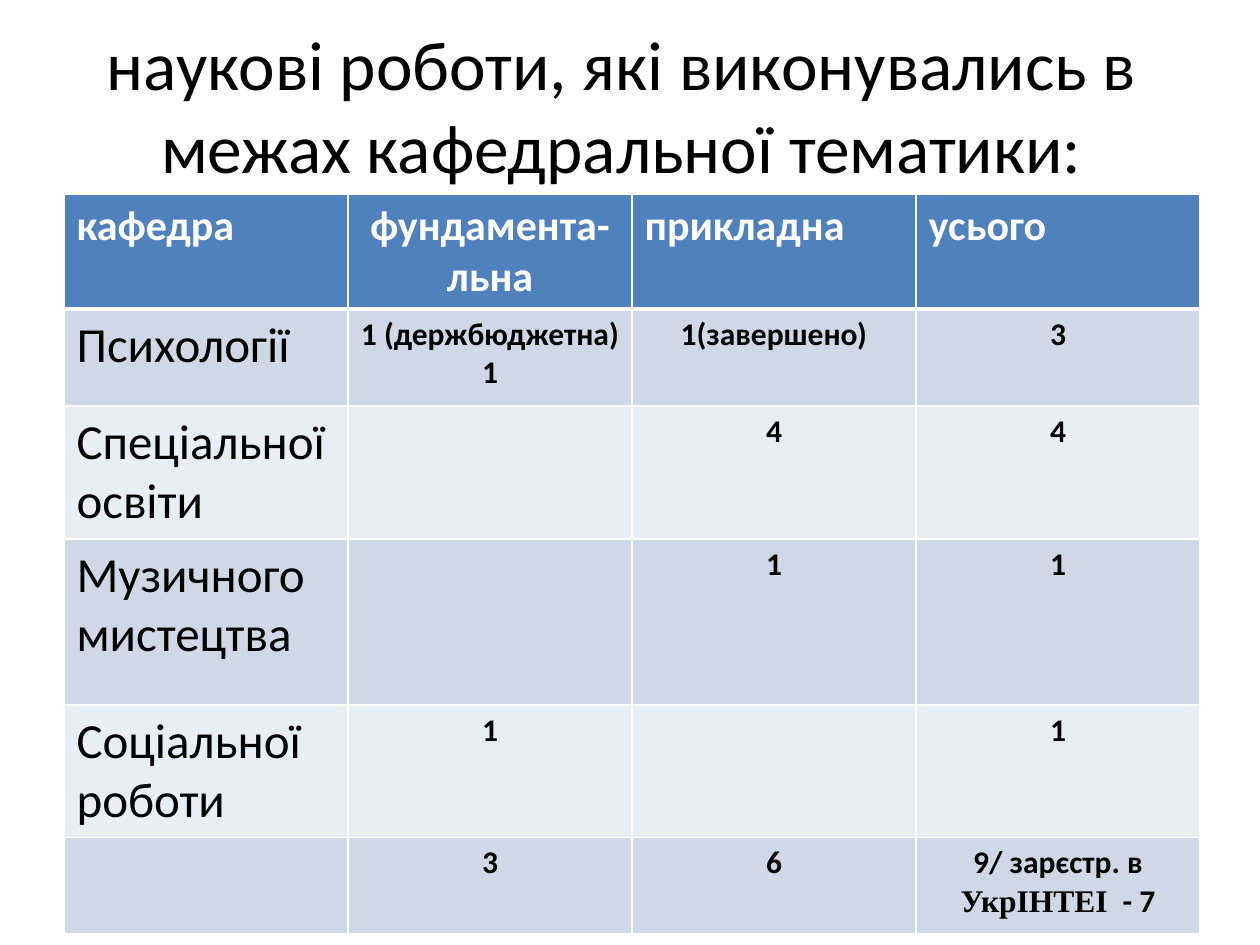
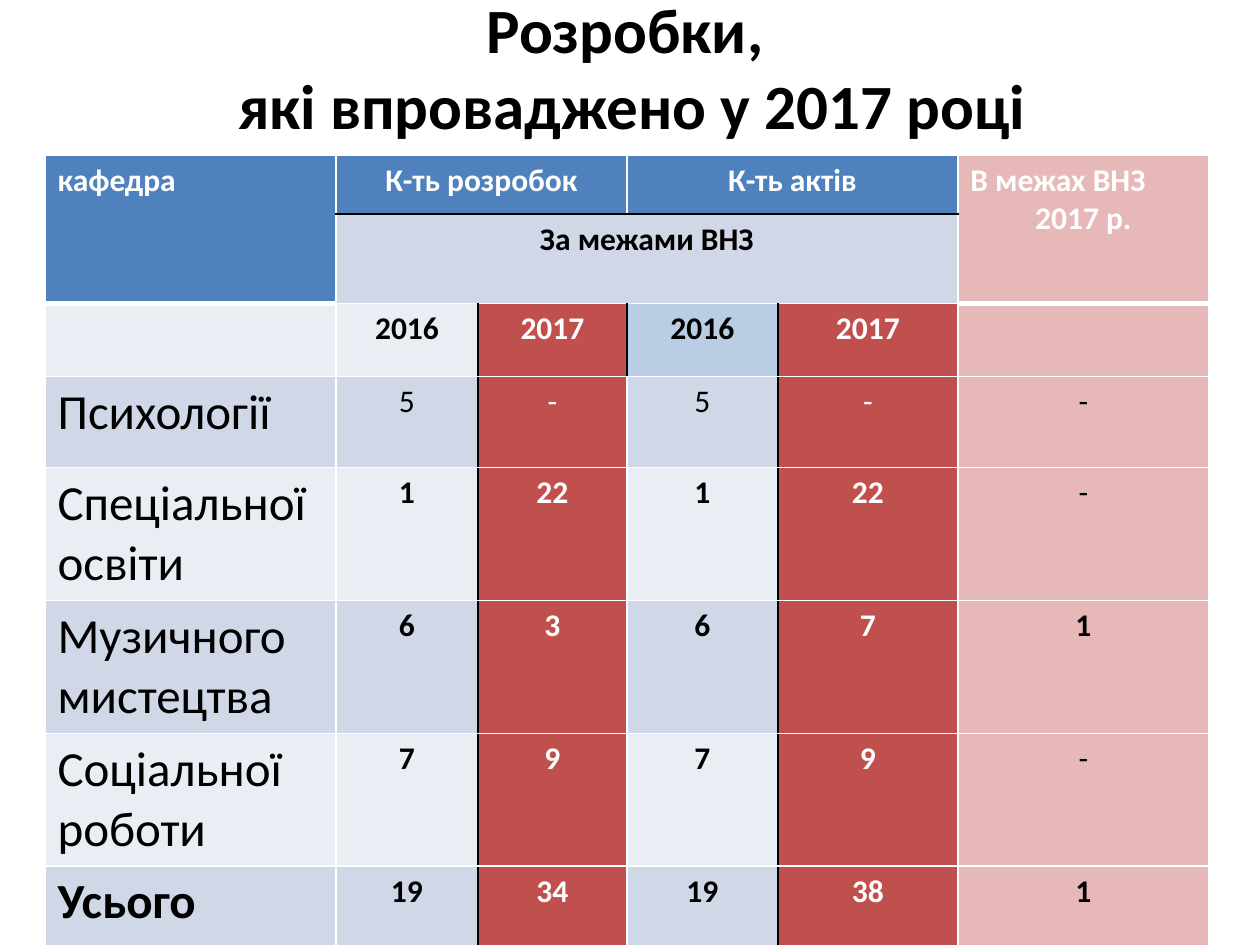
from lxml import etree
from pptx import Presentation
from pptx.dml.color import RGBColor
from pptx.enum.text import MSO_ANCHOR, MSO_AUTO_SIZE, PP_ALIGN
from pptx.oxml.ns import qn
from pptx.util import Pt

LEFT, CENTER = PP_ALIGN.LEFT, PP_ALIGN.CENTER
MIDDLE = MSO_ANCHOR.MIDDLE
NO_AUTOFIT = MSO_AUTO_SIZE.NONE

EMU_PER_PX = 914400 / 126
SLIDE_WIDTH, SLIDE_HEIGHT = 1260, 945
FONT = "Calibri"
COLORS = {
    "white": "FFFFFF",
    "black": "000000",
    "header": "4F81BD",
    "band_dark": "D0D8E8",
    "band_light": "E9EDF4",
    "year_2017": "C0504D",
    "year_2016": "B9CDE5",
    "internal": "E6B9B8",
}

WORKS = [
    ["кафедра", "фундамента-\nльна", "прикладна", "усього"],
    ["Психології", "1 (держбюджетна)\n1", "1(завершено)", "3"],
    ["Спеціальної освіти", "", "4", "4"],
    ["Музичного мистецтва", "", "1", "1"],
    ["Соціальної роботи", "1", "", "1"],
    ["", "3", "6", "9/ зарєстр. в "],
]
DEVELOPMENTS = [
    ["кафедра", "К-ть розробок", "", "К-ть актів", "", "В межах ВНЗ\n2017 р."],
    ["", "За межами ВНЗ", "", "", "", ""],
    ["", "2016", "2017", "2016", "2017", ""],
    ["Психології", "5", "-", "5", "-", "-"],
    ["Спеціальної освіти", "1", "22", "1", "22", "-"],
    ["Музичного мистецтва", "6", "3", "6", "7", "1"],
    ["Соціальної роботи", "7", "9", "7", "9", "-"],
    ["Усього", "19", "34", "19", "38", "1"],
]


def px(length):
    return round(length * EMU_PER_PX)


def rgb(name):
    return RGBColor.from_string(COLORS[name])


def format_text(text_frame, size, color, bold, alignment):
    for paragraph in text_frame.paragraphs:
        paragraph.alignment = alignment
        for run in paragraph.runs:
            run.font.name = FONT
            run.font.size = Pt(size)
            run.font.bold = bold
            run.font.color.rgb = rgb(color)


def add_title(slide, text, left, top, width, height, size, bold):
    shape = slide.shapes.add_textbox(px(left), px(top), px(width), px(height))
    text_frame = shape.text_frame
    text_frame.word_wrap = True
    text_frame.auto_size = NO_AUTOFIT
    text_frame.vertical_anchor = MIDDLE
    text_frame.text = text
    format_text(text_frame, size, "black", bold, CENTER)


def add_grid(slide, left, top, columns, rows):
    frame = slide.shapes.add_table(len(rows), len(columns), px(left), px(top),
                                   px(sum(columns)), px(sum(rows)))
    table = frame.table
    table.first_row = table.horz_banding = False
    for column, width in zip(table.columns, columns):
        column.width = px(width)
    for row, height in zip(table.rows, rows):
        row.height = px(height)
    return table


def fill_cell(cell, text, fill, size, color, bold, alignment):
    cell.fill.solid()
    cell.fill.fore_color.rgb = rgb(fill)
    cell.text_frame.text = text
    format_text(cell.text_frame, size, color, bold, alignment)


def draw_borders(table, special_edges):
    """Edges are keyed by direction, row and column; the rest are thin white."""
    for row in range(len(table.rows)):
        for column in range(len(table.columns)):
            properties = table.cell(row, column)._tc.get_or_add_tcPr()
            edges = {
                "a:lnL": ("v", row, column),
                "a:lnR": ("v", row, column + 1),
                "a:lnT": ("h", row, column),
                "a:lnB": ("h", row + 1, column),
            }
            for position, (tag, edge) in enumerate(edges.items()):
                color, width = special_edges.get(edge, ("white", 1))
                line = etree.Element(qn(tag), w=str(Pt(width)))
                fill = etree.SubElement(line, qn("a:solidFill"))
                etree.SubElement(fill, qn("a:srgbClr"), val=COLORS[color])
                properties.insert(position, line)


def band(row):
    return "band_dark" if row % 2 else "band_light"


def build_works(slide):
    add_title(slide, "наукові роботи, які виконувались в межах кафедральної тематики:",
              54, 26, 1135, 157, 39.6, False)
    table = add_grid(slide, 64, 194, [284] * 4, [115, 97, 133, 166, 132, 96])
    for row, values in enumerate(WORKS):
        for column, text in enumerate(values):
            cell = table.cell(row, column)
            if row == 0:
                alignment = CENTER if column == 1 else LEFT
                fill_cell(cell, text, "header", 24, "white", True, alignment)
            elif column == 0:
                fill_cell(cell, text, band(row), 28, "black", False, LEFT)
            else:
                fill_cell(cell, text, band(row), 18, "black", True, CENTER)

    # The registered total continues in a second font
    text_frame = table.cell(5, 3).text_frame
    paragraph = text_frame.paragraphs[0]
    for text in ("УкрІНТЕІ ", " - 7"):
        paragraph.add_run().text = text
    format_text(text_frame, 18, "black", True, CENTER)
    paragraph.runs[1].font.name = "Times New Roman"

    draw_borders(table, {("h", 1, column): ("white", 3) for column in range(4)})


def development_fill(row, column):
    if column == 5:
        return "internal"
    if row == 0 or (row == 1 and column == 0):
        return "header"
    if row >= 2 and column in (2, 4):
        return "year_2017"
    if (row, column) == (2, 3):
        return "year_2016"
    return band(row)


def build_developments(slide):
    add_title(slide, "Розробки, \vякі впроваджено у 2017 році",
              65, 3, 1134, 127, 36, True)
    table = add_grid(slide, 45, 155, [291, 142, 149, 151, 180, 251],
                     [59, 89, 73, 91, 133, 133, 132, 92])
    for row, values in enumerate(DEVELOPMENTS):
        for column, text in enumerate(values):
            fill = development_fill(row, column)
            department = column == 0 and row > 2
            size = 28 if department else 18
            color = "white" if row == 0 or fill == "year_2017" else "black"
            bold = row == 7 if department else row != 3 and text != "-"
            alignment = LEFT if column == 0 else CENTER
            fill_cell(table.cell(row, column), text, fill, size, color, bold, alignment)
    table.cell(0, 5).text_frame.paragraphs[0].alignment = LEFT

    # Borders: thick under the header, black between the year columns
    edges = {("h", 2, column): ("white", 3) for column in (0, 5)}
    edges.update({("h", 1, column): ("black", 1) for column in range(1, 5)})
    edges.update({("v", row, column): ("black", 1)
                  for row in range(2, 8) for column in (2, 4)})
    edges["v", 2, 3] = ("black", 1)
    draw_borders(table, edges)

    # Merged header cells
    for first, last in [((0, 0), (1, 0)), ((0, 1), (0, 2)), ((0, 3), (0, 4)),
                        ((0, 5), (1, 5)), ((1, 1), (1, 4))]:
        table.cell(*first).merge(table.cell(*last))


def main():
    presentation = Presentation()
    presentation.slide_width = px(SLIDE_WIDTH)
    presentation.slide_height = px(SLIDE_HEIGHT)
    blank = presentation.slide_layouts[6]
    for build in (build_works, build_developments):
        build(presentation.slides.add_slide(blank))
    presentation.save("out.pptx")


if __name__ == "__main__":
    main()
